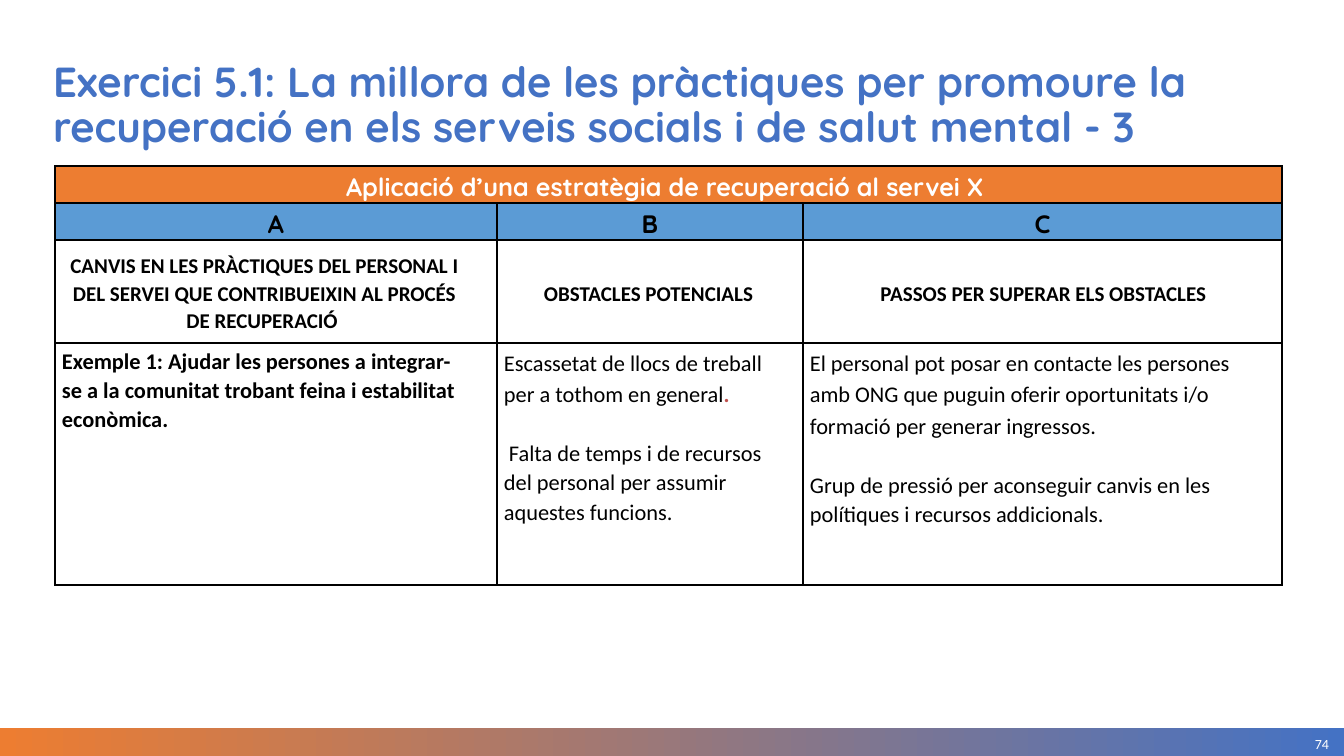
from dataclasses import dataclass
from lxml import etree
from pptx import Presentation, util as u
from pptx.dml.color import RGBColor
from pptx.enum import shapes, text
from pptx.oxml.ns import qn

PX = 914400 / 100.8  # EMU in one px


def px(n):
    return u.Emu(round(n * PX))


@dataclass(frozen=True)
class Theme:
    orange: str = "ED7D31"
    blue: str = "4472C4"
    light_blue: str = "5B9BD5"
    red: str = "C0504D"
    black: str = "000000"
    white: str = "FFFFFF"
    heading_font: str = "Quicksand"
    body_font: str = "Calibri"
    title: int = 30
    band: int = 18
    label: int = 15
    body: int = 16
    page: int = 10


@dataclass(frozen=True)
class Style:
    font: str
    size: int
    color: str
    bold: bool = False
    align: text.PP_ALIGN = text.PP_ALIGN.LEFT
    spacing: float = 1.0
    gap: int = 0  # points between paragraphs


class SlideBuilder:
    def __init__(self, prs, theme):
        self.t = theme
        self.s = prs.slides.add_slide(prs.slide_layouts[6])

    def set_text(self, tf, style, *paragraphs):
        for i, content in enumerate(paragraphs):
            p = tf.paragraphs[0] if i == 0 else tf.add_paragraph()
            p.text = content
            p.alignment = style.align
            p.line_spacing = style.spacing
            if i:
                p.space_before = u.Pt(style.gap)
            for r in p.runs:
                self.format_run(r, style)

    def format_run(self, r, style):
        r.font.name = style.font
        r.font.size = u.Pt(style.size)
        r.font.bold = style.bold
        r.font.color.rgb = RGBColor.from_string(style.color)

    def textbox(self, box, content, style, anchor, insets):
        tf = self.s.shapes.add_textbox(*map(px, box)).text_frame
        tf.word_wrap = True
        tf.vertical_anchor = anchor
        tf.margin_left = tf.margin_right = px(insets[0])
        tf.margin_top = tf.margin_bottom = px(insets[1])
        self.set_text(tf, style, content)

    def gradient_bar(self, box, colors):
        sp = self.s.shapes.add_shape(shapes.MSO_SHAPE.RECTANGLE, *map(px, box))
        sp.shadow.inherit = False
        sp.line.fill.background()
        sp.fill.gradient()
        sp.fill.gradient_angle = 0
        for stop, color in zip(sp.fill.gradient_stops, colors):
            stop.color.rgb = RGBColor.from_string(color)

    def table(self, left, top, widths, heights):
        frame = self.s.shapes.add_table(
            len(heights), len(widths),
            *map(px, (left, top, sum(widths), sum(heights))))
        table = frame.table
        table.first_row = table.horz_banding = False
        for column, width in zip(table.columns, widths):
            column.width = px(width)
        for row, height in zip(table.rows, heights):
            row.height = px(height)
        for cell in table.iter_cells():
            self.border(cell)
            cell.fill.background()
        return table

    def border(self, cell):
        tcPr = cell._tc.get_or_add_tcPr()
        for side in ("a:lnL", "a:lnR", "a:lnT", "a:lnB"):
            ln = etree.SubElement(tcPr, qn(side), w=str(int(u.Pt(1))))
            fill = etree.SubElement(ln, qn("a:solidFill"))
            etree.SubElement(fill, qn("a:srgbClr"), val=self.t.black)

    def cell(self, cell, style, paragraphs, insets, fill=None, middle=True):
        """Fill one cell; insets are left, top, right, bottom in px."""
        (cell.margin_left, cell.margin_top,
         cell.margin_right, cell.margin_bottom) = map(px, insets)
        if middle:
            cell.vertical_anchor = text.MSO_ANCHOR.MIDDLE
        if fill:
            cell.fill.solid()
            cell.fill.fore_color.rgb = RGBColor.from_string(fill)
        self.set_text(cell.text_frame, style, *paragraphs)


def main():
    prs = Presentation()
    prs.slide_width, prs.slide_height = px(1344), px(756)
    t = Theme()
    b = SlideBuilder(prs, t)
    center = text.PP_ALIGN.CENTER

    b.gradient_bar((0, 728, 1344, 28), (t.orange, t.blue))
    page = Style(t.body_font, t.page, t.white, align=text.PP_ALIGN.RIGHT)
    b.textbox((1147, 732, 182, 24), "74", page, text.MSO_ANCHOR.MIDDLE, (0, 0))
    title = Style(t.heading_font, t.title, t.blue, True, spacing=0.9)
    b.textbox((43, 56, 1246, 39),
              "Exercici 5.1: La millora de les pràctiques per promoure la "
              "recuperació en els serveis socials i de salut mental - 3",
              title, text.MSO_ANCHOR.TOP, (10, 5))

    table = b.table(55, 166, (442, 306, 479), (37, 37, 103, 242))
    band_insets = (9, 0, 9, 0)
    wide, narrow = (7, 3, 30, 0), (7, 3, 5, 0)

    table.cell(0, 0).merge(table.cell(0, 2))
    b.cell(table.cell(0, 0),
           Style(t.heading_font, t.band, t.white, True, center, 1.15),
           ["Aplicació d’una estratègia de recuperació al servei X "],
           band_insets, t.orange)

    letter = Style(t.heading_font, t.band, t.black, True, center, 1.15)
    label = Style(t.body_font, t.label, t.black, True, center, 1.07)
    example = Style(t.body_font, t.body, t.black, True, spacing=1.07)
    answer = Style(t.body_font, t.body, t.black, spacing=1.07, gap=21)
    columns = [
        ("A", "CANVIS EN LES PRÀCTIQUES DEL PERSONAL I DEL SERVEI QUE "
              "CONTRIBUEIXIN AL PROCÉS DE RECUPERACIÓ ", wide, example,
         ["Exemple 1: Ajudar les persones a integrar-se a la comunitat "
          "trobant feina i estabilitat econòmica."]),
        ("B", "OBSTACLES POTENCIALS ", narrow, answer,
         ["Escassetat de llocs de treball per a tothom en general",
          " Falta de temps i de recursos del personal per assumir "
          "aquestes funcions."]),
        ("C", "PASSOS PER SUPERAR ELS OBSTACLES", narrow, answer,
         ["El personal pot posar en contacte les persones amb ONG que "
          "puguin oferir oportunitats i/o formació per generar ingressos.",
          "Grup de pressió per aconseguir canvis en les polítiques i "
          "recursos addicionals."]),
    ]
    for i, (name, heading, insets, style, body) in enumerate(columns):
        b.cell(table.cell(1, i), letter, [name], band_insets, t.light_blue)
        b.cell(table.cell(2, i), label, [heading], insets)
        b.cell(table.cell(3, i), style, body, wide, middle=False)
        if style is answer:
            table.cell(3, i).text_frame.paragraphs[0].line_spacing = 1.15

    r = table.cell(3, 1).text_frame.paragraphs[0].add_run()
    r.text = "."
    b.format_run(r, Style(t.body_font, t.body, t.red, True))

    prs.save("out.pptx")


if __name__ == "__main__":
    main()
